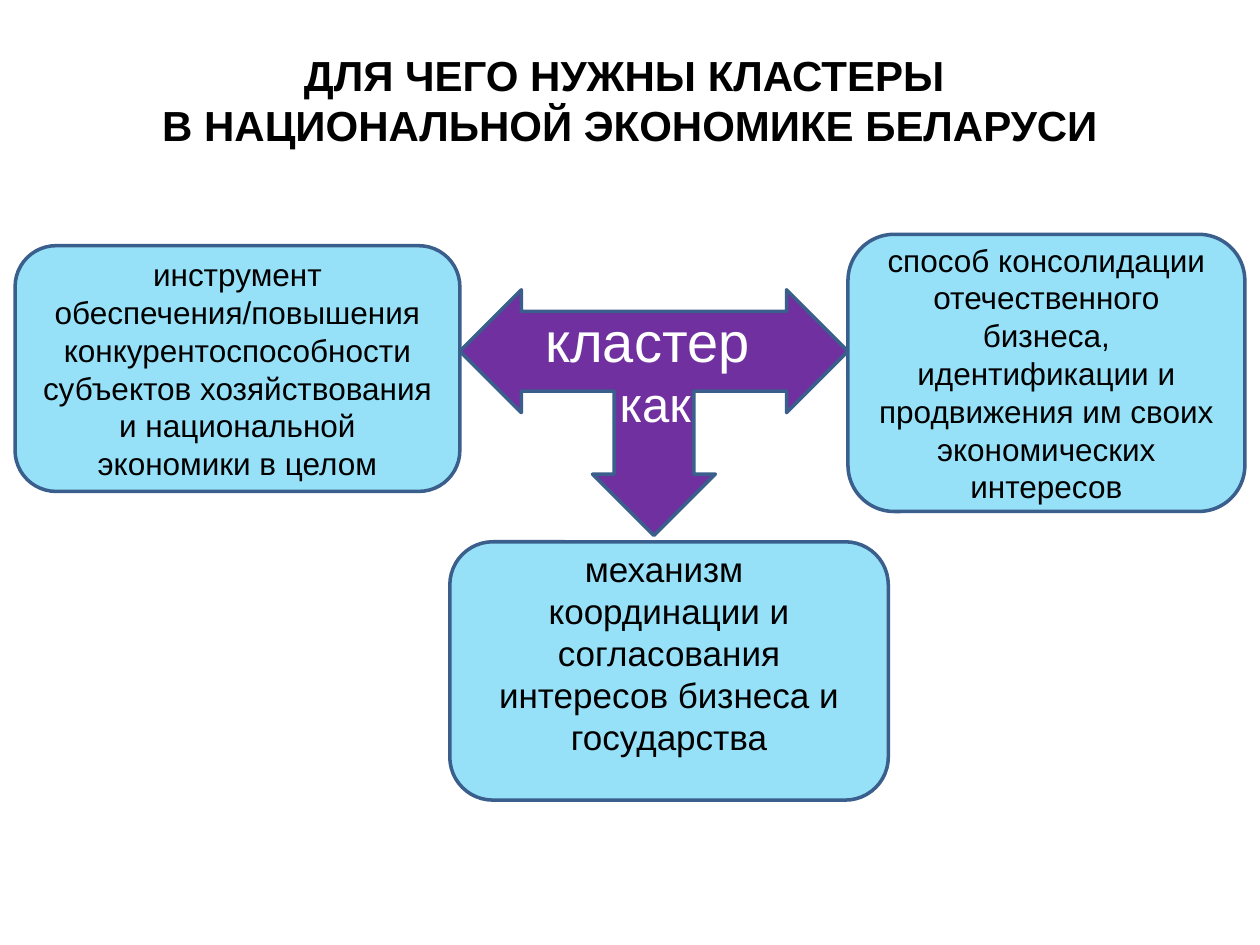
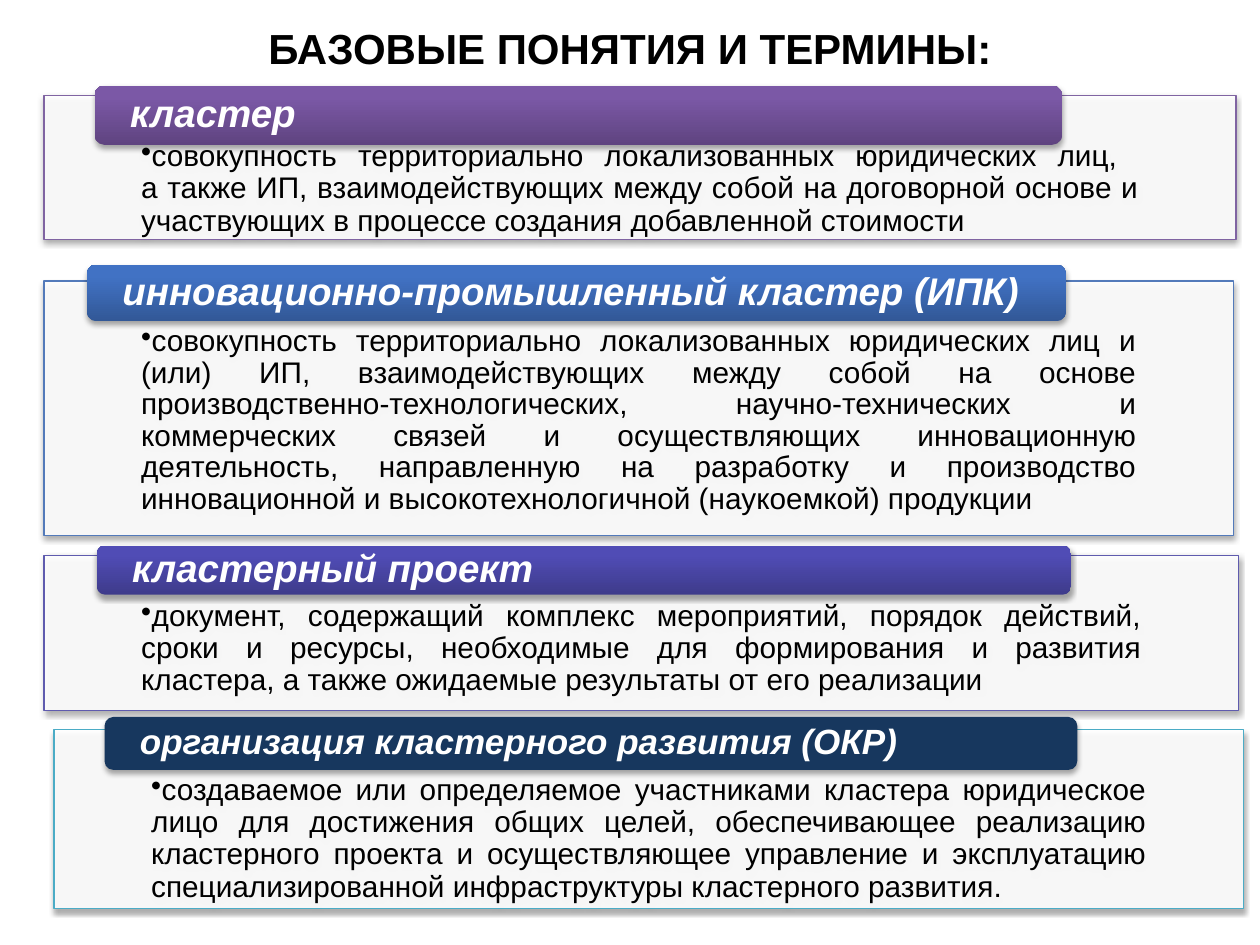
from lxml.etree import SubElement
from pptx import Presentation
from pptx.dml.color import RGBColor
from pptx.enum.shapes import MSO_SHAPE
from pptx.enum.text import MSO_ANCHOR, MSO_AUTO_SIZE, PP_ALIGN
from pptx.oxml.ns import qn
from pptx.util import Inches, Pt

FONT = "Arial"
COLORS = {
    "text": "000000", "light": "FFFFFF", "panel": "FFFFFF", "shadow": "000000",
    "box": "96E1F8", "outline": "3A5F8C", "arrow": "7030A0",
}
BOX_INSETS = (0.1, 0.05, 0.1, 0.05)
PANEL_INSETS = (0.77, 0.36, 0.77, 0.13)
BAR_INSETS = (0.26, 0, 0.26, 0)

# Content: places are left, top, width, height in inches
PURPOSE_TITLE = ["ДЛЯ ЧЕГО НУЖНЫ КЛАСТЕРЫ ", "В НАЦИОНАЛЬНОЙ ЭКОНОМИКЕ БЕЛАРУСИ"]
TERMS_TITLE = ["БАЗОВЫЕ ПОНЯТИЯ И ТЕРМИНЫ:"]

PURPOSES = [
    {"place": (3.57, 4.3, 3.48, 2.05), "size": 20, "insets": (0.1, 0.05, 0.1, 0.34),
     "lines": ["механизм ", "координации и согласования интересов бизнеса и государства"]},
    {"place": (0.12, 1.95, 3.53, 1.95), "size": 18, "insets": BOX_INSETS,
     "lines": ["инструмент обеспечения/повышения конкурентоспособности "
               "субъектов хозяйствования и национальной экономики в целом"]},
    {"place": (6.73, 1.86, 3.15, 2.2), "size": 18, "insets": BOX_INSETS,
     "lines": ["способ консолидации отечественного бизнеса, идентификации и "
               "продвижения им своих экономических интересов"]},
]
ARROW_PLACE = (3.65, 2.3, 3.08, 1.95)
ARROW_LABEL_PLACE = (4.18, 2.38, 2.04, 1.11)
ARROW_LABEL = [("кластер ", 32), ("как", 28)]

TERMS = [
    {"term": "кластер", "size": 22, "bar": (0.75, 0.68, 7.68, 0.47),
     "shades": ("5F4480", "7B58A6"), "panel": (0.35, 0.76, 9.46, 1.14),
     "edge": "8064A2", "spacing": 0.9,
     "meaning": "совокупность территориально локализованных юридических лиц, \n"
                "а также ИП, взаимодействующих между собой на договорной основе и "
                "участвующих в процессе создания добавленной стоимости"},
    {"term": "инновационно-промышленный кластер (ИПК)", "size": 22,
     "bar": (0.69, 2.1, 7.77, 0.45),
     "shades": ("325897", "4172C4"), "panel": (0.35, 2.23, 9.44, 2.02),
     "edge": "537ABA", "spacing": Pt(18),
     "meaning": "совокупность территориально локализованных юридических лиц и (или) "
                "ИП, взаимодействующих между собой на основе "
                "производственно-технологических, научно-технических и коммерческих "
                "связей и осуществляющих инновационную деятельность, направленную на "
                "разработку и производство инновационной и высокотехнологичной "
                "(наукоемкой) продукции"},
    {"term": "кластерный проект", "size": 22, "bar": (0.77, 4.33, 7.73, 0.39),
     "shades": ("3E3B8B", "504CB5"), "panel": (0.35, 4.41, 9.48, 1.23),
     "edge": "5F5BAE", "spacing": 0.9,
     "meaning": "документ, содержащий комплекс мероприятий, порядок действий, сроки и "
                "ресурсы, необходимые для формирования и развития кластера, а также "
                "ожидаемые результаты от его реализации"},
    {"term": "организация кластерного развития (ОКР)", "size": 20,
     "bar": (0.83, 5.69, 7.72, 0.42),
     "shades": ("17375E",), "panel": (0.43, 5.79, 9.44, 1.42),
     "edge": "4BACC6", "spacing": 0.9,
     "meaning": "создаваемое или определяемое участниками кластера юридическое лицо "
                "для достижения общих целей, обеспечивающее реализацию кластерного "
                "проекта и осуществляющее управление и эксплуатацию специализированной "
                "инфраструктуры кластерного развития."},
]


# Shared building blocks
def rgb(value):
    return RGBColor.from_string(value)


def inches(place):
    return [Inches(length) for length in place]


def set_frame(frame, insets=BOX_INSETS, anchor=MSO_ANCHOR.TOP, wrap=True):
    frame.word_wrap = wrap
    frame.auto_size = MSO_AUTO_SIZE.NONE
    frame.vertical_anchor = anchor
    (frame.margin_left, frame.margin_top,
     frame.margin_right, frame.margin_bottom) = inches(insets)


def write(frame, lines, color=COLORS["text"], align=PP_ALIGN.CENTER,
          spacing=1.0, bold=False, italic=False, bullet=None):
    """Write (text, size) lines, one paragraph each; a newline breaks the line."""
    for number, (text, size) in enumerate(lines):
        paragraph = frame.add_paragraph() if number else frame.paragraphs[0]
        paragraph.alignment = align
        paragraph.line_spacing = spacing
        paragraph.space_before = Pt(0)
        if bullet:
            properties = paragraph._p.get_or_add_pPr()
            properties.set("marL", "0")
            properties.set("indent", str(-Inches(0.19)))
            SubElement(properties, qn("a:buChar"), char=bullet)
        for part_number, part in enumerate(text.split("\n")):
            if part_number:
                paragraph.add_line_break()
            run = paragraph.add_run()
            run.text = part
            run.font.name, run.font.size = FONT, Pt(size)
            run.font.bold, run.font.italic = bold, italic
            run.font.color.rgb = rgb(color)


def add_block(slide, preset, place, fill=None, edge=None, edge_width=2):
    block = slide.shapes.add_shape(preset, *inches(place))
    block.shadow.inherit = False
    if fill:
        block.fill.solid()
        block.fill.fore_color.rgb = rgb(fill)
    if edge:
        block.line.color.rgb = rgb(edge)
        block.line.width = Pt(edge_width)
    else:
        block.line.fill.background()
    return block


def add_soft_shadow(block):
    effects = block._element.spPr.find(qn("a:effectLst"))
    shadow = SubElement(effects, qn("a:outerShdw"), blurRad=str(Pt(3.1)),
                        dist=str(Pt(1.8)), dir="5400000", rotWithShape="0")
    tone = SubElement(shadow, qn("a:srgbClr"), val=COLORS["shadow"])
    SubElement(tone, qn("a:alpha"), val="35000")


def add_titled_slide(deck, lines, place):
    slide = deck.slides.add_slide(deck.slide_layouts[5])
    title = slide.shapes.title
    title.left, title.top, title.width, title.height = inches(place)
    set_frame(title.text_frame, wrap=False)
    write(title.text_frame, [(line, 24) for line in lines], bold=True)
    return slide


# Slide 1: what clusters are for
def build_purposes(deck):
    slide = add_titled_slide(deck, PURPOSE_TITLE, (1.15, 0.34, 7.7, 0.91))
    for purpose in PURPOSES:
        box = add_block(slide, MSO_SHAPE.ROUNDED_RECTANGLE, purpose["place"],
                        COLORS["box"], COLORS["outline"])
        set_frame(box.text_frame, purpose["insets"], MSO_ANCHOR.MIDDLE)
        write(box.text_frame, [(line, purpose["size"]) for line in purpose["lines"]])

    arrow = add_block(slide, MSO_SHAPE.LEFT_RIGHT_UP_ARROW, ARROW_PLACE,
                      COLORS["arrow"], COLORS["outline"])
    arrow.rotation = 180
    arrow.adjustments[0] = 0.324
    label = slide.shapes.add_textbox(*inches(ARROW_LABEL_PLACE))
    set_frame(label.text_frame)
    write(label.text_frame, ARROW_LABEL, COLORS["light"])


# Slide 2: each term is a bar over the panel with its meaning
def add_term(slide, entry):
    panel = add_block(slide, MSO_SHAPE.RECTANGLE, entry["panel"],
                      COLORS["panel"], entry["edge"], 0.75)
    tone = panel._element.spPr.find(qn("a:solidFill")).find(qn("a:srgbClr"))
    SubElement(tone, qn("a:alpha"), val="90000")
    add_soft_shadow(panel)
    set_frame(panel.text_frame, PANEL_INSETS)
    write(panel.text_frame, [(entry["meaning"], 17)], align=PP_ALIGN.JUSTIFY,
          spacing=entry["spacing"], bullet="•")

    shades = entry["shades"]
    bar = add_block(slide, MSO_SHAPE.ROUNDED_RECTANGLE, entry["bar"], shades[0])
    if len(shades) > 1:
        bar.fill.gradient()
        bar.fill.gradient_angle = 90
        for stop, shade, position in zip(bar.fill.gradient_stops, shades, (0, 0.8)):
            stop.color.rgb = rgb(shade)
            stop.position = position
    add_soft_shadow(bar)
    set_frame(bar.text_frame, BAR_INSETS, MSO_ANCHOR.MIDDLE)
    write(bar.text_frame, [(entry["term"], entry["size"])], COLORS["light"],
          PP_ALIGN.LEFT, 0.9, bold=True, italic=True)


def build_terms(deck):
    slide = add_titled_slide(deck, TERMS_TITLE, (2, 0.13, 6, 0.5))
    for entry in TERMS:
        add_term(slide, entry)


def main():
    deck = Presentation()
    deck.slide_width, deck.slide_height = Inches(10), Inches(7.5)
    build_purposes(deck)
    build_terms(deck)
    deck.save("out.pptx")


if __name__ == "__main__":
    main()
